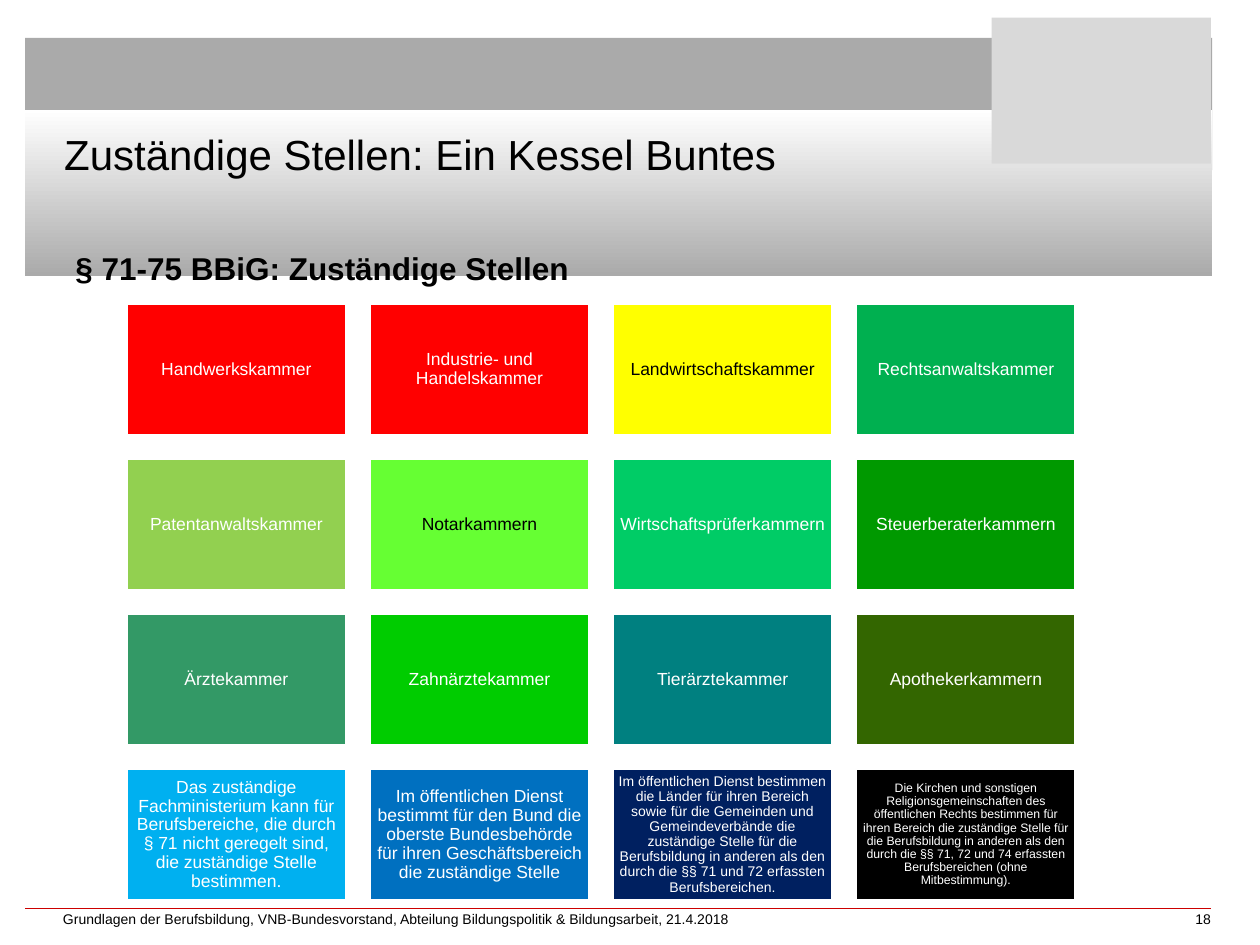
from lxml.etree import SubElement
from pptx import Presentation
from pptx.dml.color import RGBColor
from pptx.enum.shapes import MSO_CONNECTOR, MSO_SHAPE
from pptx.enum.text import MSO_ANCHOR as Anchor, MSO_AUTO_SIZE as AutoSize, PP_ALIGN as Align
from pptx.oxml.ns import qn
from pptx.util import Inches, Pt

FONT = "Arial"
BLACK, WHITE, GREY, RED = "000000", "FFFFFF", "AAAAAA", "FF0000"

TITLE = "Zuständige Stellen: Ein Kessel Buntes"
HEADING = "§ 71-75 BBiG: Zuständige Stellen"
FOOTER = ("Grundlagen der Berufsbildung, VNB-Bundesvorstand, "
          "Abteilung Bildungspolitik & Bildungsarbeit, 21.4.2018")
PAGE_NUMBER = "18"

# Text, fill, text colour, text size
TILES = [
    ("Handwerkskammer", RED, WHITE, 10),
    ("Industrie- und Handelskammer", RED, WHITE, 10),
    ("Landwirtschaftskammer", "FFFF00", BLACK, 10),
    ("Rechtsanwaltskammer", "00B050", WHITE, 10),
    ("Patentanwaltskammer", "92D050", WHITE, 10),
    ("Notarkammern", "66FF33", BLACK, 10),
    ("Wirtschaftsprüferkammern", "00CC66", WHITE, 10),
    ("Steuerberaterkammern", "009900", WHITE, 10),
    ("Ärztekammer", "339966", WHITE, 10),
    ("Zahnärztekammer", "00CC00", WHITE, 10),
    ("Tierärztekammer", "008080", WHITE, 10),
    ("Apothekerkammern", "336600", WHITE, 10),
    ("Das zuständige Fachministerium kann für Berufsbereiche, die durch § 71 "
     "nicht geregelt sind, die zuständige Stelle bestimmen.", "00B0F0", WHITE, 10),
    ("Im öffentlichen Dienst bestimmt für den Bund die oberste Bundesbehörde "
     "für ihren Geschäftsbereich die zuständige Stelle", "0070C0", WHITE, 10),
    ("Im öffentlichen Dienst bestimmen die Länder für ihren Bereich sowie für "
     "die Gemeinden und Gemeindeverbände die zuständige Stelle für die "
     "Berufsbildung in anderen als den durch die §§ 71 und 72 erfassten "
     "Berufsbereichen.", "002060", WHITE, 8),
    ("Die Kirchen und sonstigen Religionsgemeinschaften des öffentlichen Rechts "
     "bestimmen für ihren Bereich die zuständige Stelle für die Berufsbildung in "
     "anderen als den durch die §§ 71, 72 und 74 erfassten Berufsbereichen "
     "(ohne Mitbestimmung).", BLACK, WHITE, 7),
]
COLUMNS = 4
GRID_LEFT, GRID_TOP = 1, 2.41
TILE_WIDTH, TILE_HEIGHT = 1.75, 1.05
COLUMN_GAP, ROW_GAP = 0.18, 0.18


def rgb(colour):
    return RGBColor.from_string(colour)


def inches(*lengths):
    return [Inches(length) for length in lengths]


def add_block(page, at, fill=None):
    block = page.shapes.add_shape(MSO_SHAPE.RECTANGLE, *inches(*at))
    block.shadow.inherit = False
    block.line.fill.background()
    if fill:
        block.fill.solid()
        block.fill.fore_color.rgb = rgb(fill)
    return block


def write(shape, text, size, colour=BLACK, bold=False, align=Align.LEFT,
          anchor=Anchor.MIDDLE, insets=(0, 0), spacing=None):
    """Fill a shape with one formatted paragraph; insets are (sides, top and bottom)."""
    frame = shape.text_frame
    frame.text = text
    frame.word_wrap = True
    frame.auto_size = AutoSize.NONE
    frame.vertical_anchor = anchor
    frame.margin_left = frame.margin_right = Inches(insets[0])
    frame.margin_top = frame.margin_bottom = Inches(insets[1])
    para = frame.paragraphs[0]
    para.alignment = align
    para.line_spacing = spacing
    font = para.runs[0].font
    font.name, font.size, font.bold = FONT, Pt(size), bold
    font.color.rgb = rgb(colour)


def add_text(page, at, text, size, **style):
    box = page.shapes.add_textbox(*inches(*at))
    write(box, text, size, **style)
    return box


def add_header(page):
    add_block(page, (0.2, 0.3, 9.42, 1.05), GREY)

    band = add_block(page, (0.2, 0.87, 9.42, 1.32))
    band.fill.gradient()
    band.fill.gradient_angle = 270
    for stop, colour in zip(band.fill.gradient_stops, (WHITE, GREY)):
        stop.color.rgb = rgb(colour)

    add_block(page, (7.87, 0.14, 1.74, 1.16), "D9D9D9")

    title = page.shapes.title
    title.left, title.top, title.width, title.height = inches(0.51, 0.36, 6.84, 1.11)
    write(title, TITLE, 24, anchor=Anchor.BOTTOM, insets=(0, 0.05), spacing=Pt(38))
    page.shapes.element.append(title.element)  # in front of the bands


def add_tiles(page):
    for index, (text, fill, colour, size) in enumerate(TILES):
        row, column = divmod(index, COLUMNS)
        left = GRID_LEFT + column * (TILE_WIDTH + COLUMN_GAP)
        top = GRID_TOP + row * (TILE_HEIGHT + ROW_GAP)
        tile = add_block(page, (left, top, TILE_WIDTH, TILE_HEIGHT), fill)
        tile.line.color.rgb = rgb(WHITE)
        tile.line.width = Pt(2)
        inset = 0.04 if size == 10 else 0.03
        write(tile, text, size, colour, align=Align.CENTER,
              insets=(inset, inset), spacing=0.9)


def add_footer(page):
    rule = page.shapes.add_connector(MSO_CONNECTOR.STRAIGHT,
                                     *inches(0.2, 7.21, 9.61, 7.21))
    rule.line.color.rgb = rgb("CC0000")
    rule.line.width = Pt(0.75)
    SubElement(rule.element.spPr, qn("a:effectLst"))
    add_text(page, (0.5, 7.21, 7.64, 0.16), FOOTER, 8)
    add_text(page, (9.22, 7.21, 0.39, 0.16), PAGE_NUMBER, 8, align=Align.RIGHT)


def main():
    deck = Presentation()
    deck.slide_width, deck.slide_height = inches(10, 7.5)
    page = deck.slides.add_slide(deck.slide_layouts[5])
    add_header(page)
    add_tiles(page)
    add_footer(page)
    heading = add_text(page, (0.5, 1.87, 4.58, 0.46), HEADING, 18, bold=True,
                       anchor=Anchor.TOP, insets=(0.1, 0.05), spacing=1.2)
    heading.text_frame.auto_size = AutoSize.SHAPE_TO_FIT_TEXT
    deck.save("out.pptx")


if __name__ == "__main__":
    main()
